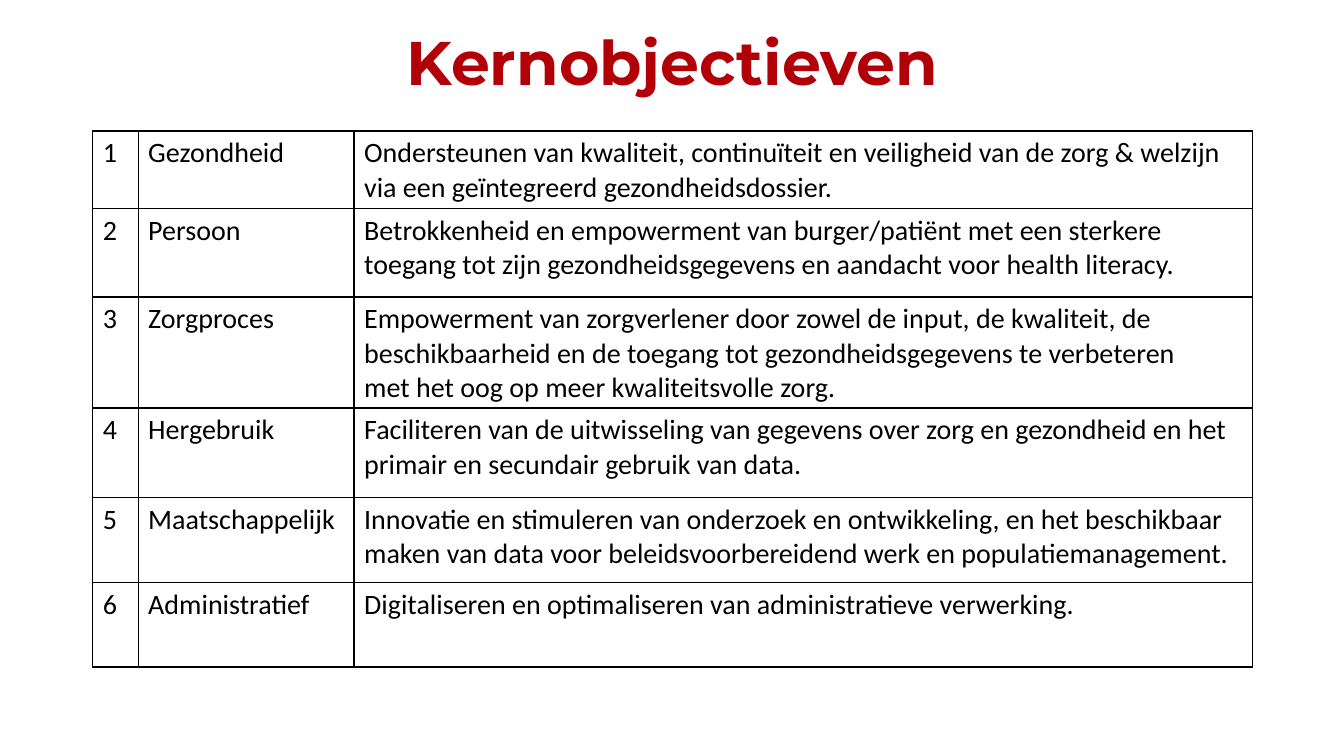
from dataclasses import dataclass

from lxml import etree
from pptx import Presentation
from pptx.dml.color import RGBColor
from pptx.enum.text import MSO_ANCHOR, PP_ALIGN
from pptx.oxml.ns import qn
from pptx.util import Inches, Pt

LEFT, CENTER = PP_ALIGN.LEFT, PP_ALIGN.CENTER
TOP, MIDDLE = MSO_ANCHOR.TOP, MSO_ANCHOR.MIDDLE


@dataclass(frozen=True)
class Theme:
    red: str = "B20008"
    black: str = "000000"
    head_font: str = "Montserrat"
    body_font: str = "Calibri"
    head_size: int = 44
    body_size: int = 20
    border: int = 1


THEME = Theme()

COLS = [0.45, 2.14, 8.9]
GOALS = [
    (0.64, "Gezondheid",
     "Ondersteunen van kwaliteit, continuïteit en veiligheid van de zorg & welzijn "
     "via een geïntegreerd gezondheidsdossier."),
    (0.88, "Persoon",
     "Betrokkenheid en empowerment van burger/patiënt met een sterkere "
     "toegang tot zijn gezondheidsgegevens en aandacht voor health literacy."),
    (0.88, "Zorgproces",
     "Empowerment van zorgverlener door zowel de input, de kwaliteit, de "
     "beschikbaarheid en de toegang tot gezondheidsgegevens te verbeteren\v"
     "met het oog op meer kwaliteitsvolle zorg."),
    (0.89, "Hergebruik",
     "Faciliteren van de uitwisseling van gegevens over zorg en gezondheid en het "
     "primair en secundair gebruik van data."),
    (0.84, "Maatschappelijk",
     "Innovatie en stimuleren van onderzoek en ontwikkeling, en het beschikbaar "
     "maken van data voor beleidsvoorbereidend werk en populatiemanagement."),
    (0.84, "Administratief",
     "Digitaliseren en optimaliseren van administratieve verwerking."),
]


def write(frame, text, font=THEME.body_font, size=THEME.body_size,
          color=THEME.black, bold=False, align=LEFT, anchor=TOP, spacing=None):
    frame.word_wrap = True
    frame.vertical_anchor = anchor
    para = frame.paragraphs[0]
    para.text = text
    para.alignment = align
    para.line_spacing = spacing
    for run in para.runs:
        run.font.name = font
        run.font.size = Pt(size)
        run.font.bold = bold
        run.font.color.rgb = RGBColor.from_string(color)


def add_title(slide, left, top, width, height):
    box = slide.shapes.add_textbox(
        Inches(left), Inches(top), Inches(width), Inches(height))
    write(box.text_frame, "Kernobjectieven", font=THEME.head_font,
          size=THEME.head_size, color=THEME.red, bold=True,
          align=CENTER, anchor=MIDDLE, spacing=0.9)


def frame_cell(cell):
    """Give the cell a border on all four sides and no fill."""
    props = cell._tc.get_or_add_tcPr()
    for side in ("a:lnL", "a:lnR", "a:lnT", "a:lnB"):
        line = etree.SubElement(props, qn(side), w=str(Pt(THEME.border)))
        fill = etree.SubElement(line, qn("a:solidFill"))
        etree.SubElement(fill, qn("a:srgbClr"), val=THEME.black)
    cell.fill.background()


def add_goals(slide, left, top, width, height):
    table = slide.shapes.add_table(
        len(GOALS), len(COLS), Inches(left), Inches(top),
        Inches(width), Inches(height)).table
    table.first_row = False
    table.horz_banding = False
    for col, size in zip(table.columns, COLS):
        col.width = Inches(size * width / sum(COLS))
    for num, (row, (tall, name, goal)) in enumerate(zip(table.rows, GOALS), 1):
        row.height = Inches(tall)
        for cell, text in zip(row.cells, (str(num), name, goal)):
            write(cell.text_frame, text)
            frame_cell(cell)


def main():
    deck = Presentation()
    deck.slide_width, deck.slide_height = Inches(13.33), Inches(7.5)
    slide = deck.slides.add_slide(deck.slide_layouts[6])
    add_title(slide, 0.92, 0.23, 11.5, 0.84)
    add_goals(slide, 0.92, 1.3, 11.5, 5.32)
    deck.save("out.pptx")


if __name__ == "__main__":
    main()
